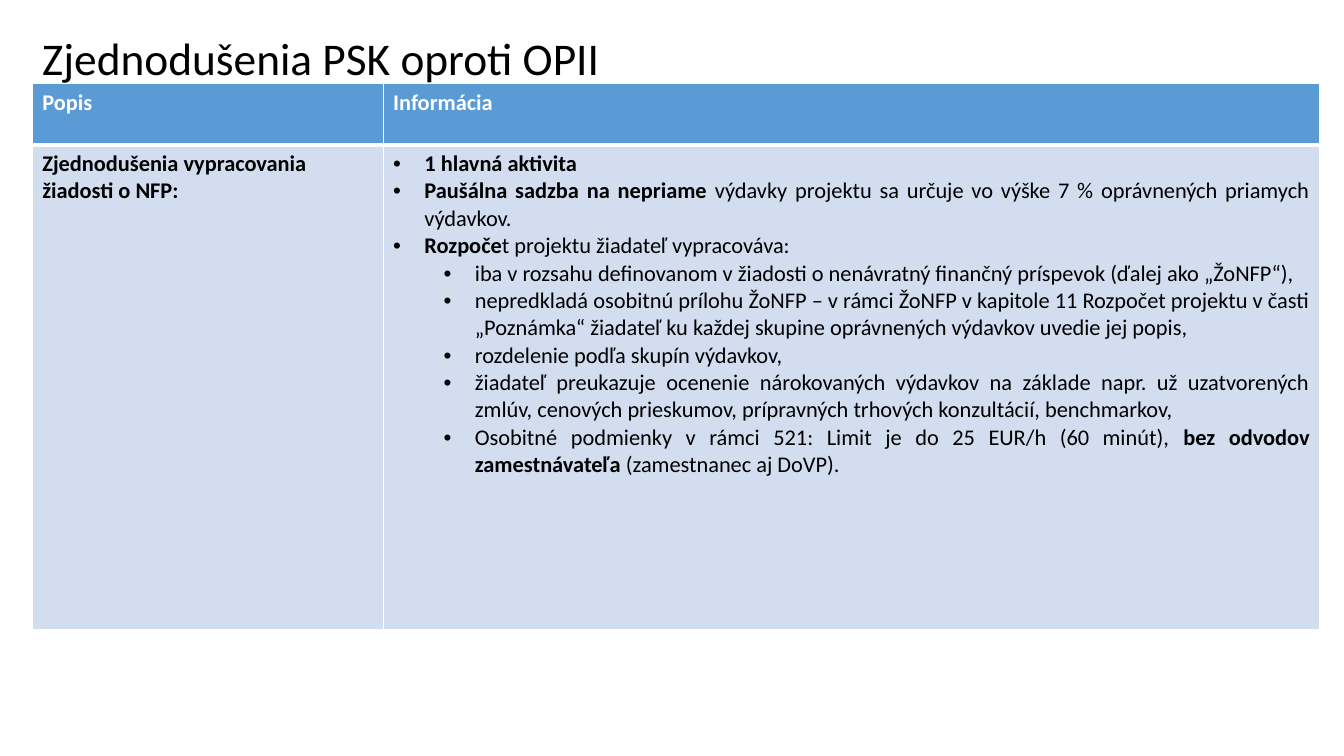
from lxml import etree
from pptx import Presentation
from pptx.dml.color import RGBColor
from pptx.enum.text import MSO_ANCHOR, PP_ALIGN
from pptx.oxml.ns import qn
from pptx.util import Inches, Pt

MIDDLE = MSO_ANCHOR.MIDDLE
JUSTIFY = PP_ALIGN.JUSTIFY
FONT = "Calibri"
WHITE, BLACK = "FFFFFF", "000000"
HEADER_FILL, BODY_FILL = "5B9BD5", "D2DEEF"
BORDER_WIDTH, HEADER_RULE_WIDTH = 1, 3
HANGING = 0.31

HEADINGS = ["Popis", "Informácia"]
TOPIC = "Zjednodušenia vypracovania žiadosti o NFP:"
SIMPLIFICATIONS = [
    (0, [("1 hlavná aktivita", True)]),
    (0, [("Paušálna sadzba na nepriame ", True),
         ("výdavky projektu sa určuje vo výške 7 % oprávnených priamych výdavkov.", False)]),
    (0, [("Rozpoče", True), ("t projektu žiadateľ vypracováva:", False)]),
    (1, [("iba v rozsahu definovanom v žiadosti o nenávratný finančný príspevok "
          "(ďalej ako „ŽoNFP“), ", False)]),
    (1, [("nepredkladá osobitnú prílohu ŽoNFP – v rámci ŽoNFP v kapitole 11 Rozpočet "
          "projektu v časti „Poznámka“ žiadateľ ku každej skupine oprávnených výdavkov "
          "uvedie jej popis,", False)]),
    (1, [("rozdelenie podľa skupín výdavkov,", False)]),
    (1, [("žiadateľ preukazuje ocenenie nárokovaných výdavkov na základe napr. už "
          "uzatvorených zmlúv, cenových prieskumov, prípravných trhových konzultácií, "
          "benchmarkov,", False)]),
    (1, [("Osobitné podmienky v rámci 521: Limit je do 25 EUR/h (60 minút), ", False),
         ("bez odvodov zamestnávateľa", True),
         (" (zamestnanec aj DoVP).", False)]),
]


def color(value):
    return RGBColor.from_string(value)


def add_run(paragraph, text, size, ink, bold=False):
    run = paragraph.add_run()
    run.text = text
    run.font.name = FONT
    run.font.size = Pt(size)
    run.font.bold = bold
    run.font.color.rgb = color(ink)


def add_bullet(paragraph, level):
    paragraph.level = level
    paragraph.alignment = JUSTIFY
    properties = paragraph._p.get_or_add_pPr()
    properties.set("marL", str(Inches(HANGING + 0.5 * level)))
    properties.set("indent", str(-Inches(HANGING)))
    etree.SubElement(properties, qn("a:buFont"), typeface="Arial")
    etree.SubElement(properties, qn("a:buChar"), char="•")


def style_cell(cell, fill, bottom_width):
    properties = cell._tc.get_or_add_tcPr()
    for side in "LRTB":
        width = bottom_width if side == "B" else BORDER_WIDTH
        line = etree.SubElement(properties, qn(f"a:ln{side}"), w=str(Pt(width)))
        solid = etree.SubElement(line, qn("a:solidFill"))
        etree.SubElement(solid, qn("a:srgbClr"), val=WHITE)
    cell.fill.solid()
    cell.fill.fore_color.rgb = color(fill)


def add_title(slide, left, top, width, height):
    title = slide.shapes.add_textbox(Inches(left), Inches(top), Inches(width), Inches(height))
    frame = title.text_frame
    frame.word_wrap = True
    frame.vertical_anchor = MIDDLE
    heading = frame.paragraphs[0]
    heading.line_spacing = 0.9
    add_run(heading, "Zjednodušenia PSK oproti OPII", 32.4, BLACK)
    add_run(heading, " ", 39.6, BLACK)


def add_information_table(slide, left, top, width, height):
    table = slide.shapes.add_table(
        2, 2, Inches(left), Inches(top), Inches(width), Inches(height)).table
    topic_width, header_height = 3.48, 0.61
    table.columns[0].width = Inches(topic_width)
    table.columns[1].width = Inches(width - topic_width)
    table.rows[0].height = Inches(header_height)
    table.rows[1].height = Inches(height - header_height)

    for column, heading in enumerate(HEADINGS):
        header = table.cell(0, column)
        style_cell(header, HEADER_FILL, HEADER_RULE_WIDTH)
        add_run(header.text_frame.paragraphs[0], heading, 16, WHITE, True)
        style_cell(table.cell(1, column), BODY_FILL, BORDER_WIDTH)

    add_run(table.cell(1, 0).text_frame.paragraphs[0], TOPIC, 16, BLACK, True)
    details = table.cell(1, 1).text_frame
    for index, (level, parts) in enumerate(SIMPLIFICATIONS):
        point = details.add_paragraph() if index else details.paragraphs[0]
        add_bullet(point, level)
        for text, bold in parts:
            add_run(point, text, 16, BLACK, bold)


def main():
    presentation = Presentation()
    presentation.slide_width = Inches(13.33)
    presentation.slide_height = Inches(7.5)
    slide = presentation.slides.add_slide(presentation.slide_layouts[6])
    add_title(slide, 0.32, 0.32, 10, 0.51)
    add_information_table(slide, 0.32, 0.83, 12.77, 5.42)
    presentation.save("out.pptx")


if __name__ == "__main__":
    main()
